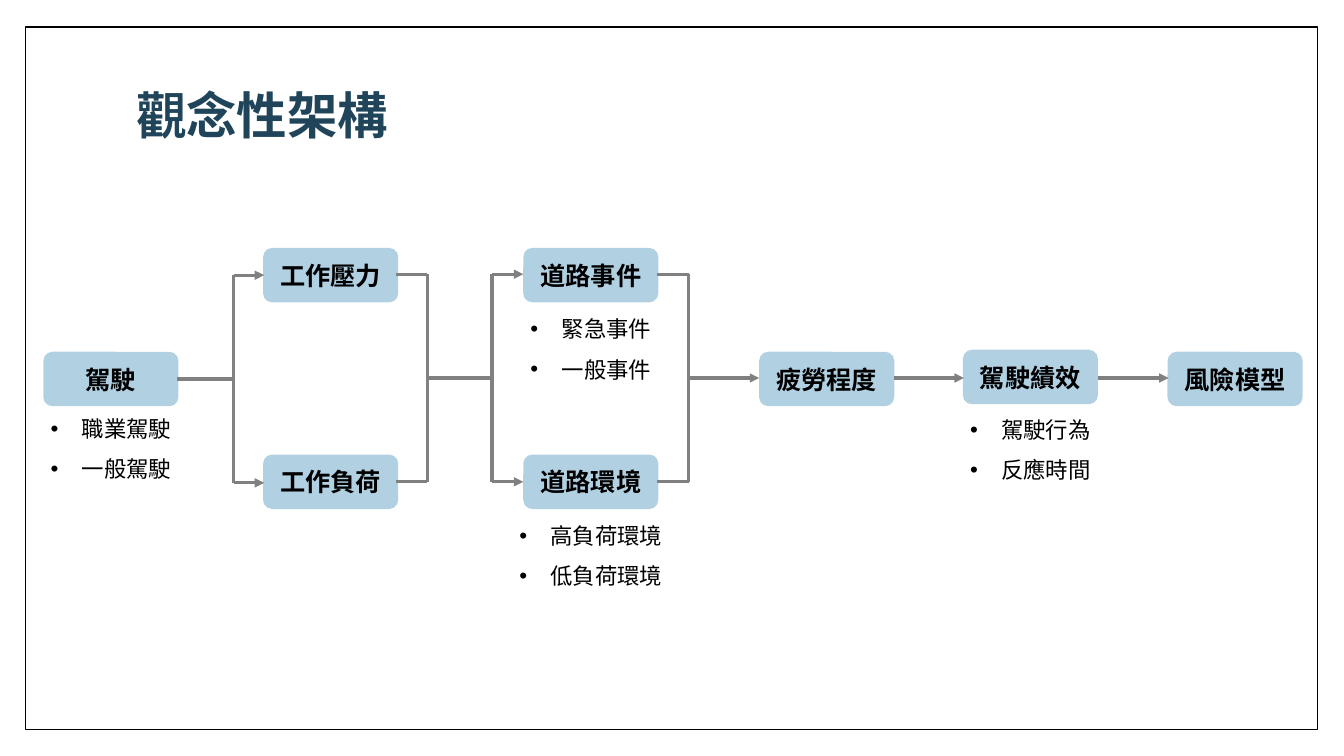
from lxml import etree
from pptx import Presentation
from pptx.dml.color import RGBColor
from pptx.enum.shapes import MSO_CONNECTOR, MSO_SHAPE
from pptx.enum.text import MSO_ANCHOR, MSO_AUTO_SIZE, PP_ALIGN
from pptx.oxml.ns import qn
from pptx.util import Inches, Pt

FONT = "Noto Sans CJK SC"
COLORS = {"title": "20455A", "text": "000000", "box": "B1D1E3",
          "line": "808080", "bracket": "818183", "page": "FFFFFF"}
BOX_W, BOX_H = 1.34, 0.54
LIST_H, INDENT = 0.71, 0.31
TOP_Y, MID_Y, LOW_Y = 2.46, 3.49, 4.51
TOP_LINE, MID_LINE, LOW_LINE = 2.72, 3.75, 4.78


def rgb(name):
    return RGBColor.from_string(COLORS[name])


def add_bullet(p):
    pPr = p._p.get_or_add_pPr()
    pPr.set("marL", str(Inches(INDENT)))
    pPr.set("indent", str(-Inches(INDENT)))
    etree.SubElement(pPr, qn("a:buFont")).set("typeface", "Arial")
    etree.SubElement(pPr, qn("a:buChar")).set("char", "•")


def write(tf, *lines, size=18, color="text", bold=False,
          align=PP_ALIGN.CENTER, spacing=None, bullet=False):
    tf.word_wrap = True
    tf.auto_size = MSO_AUTO_SIZE.NONE
    tf.vertical_anchor = MSO_ANCHOR.MIDDLE
    for i, line in enumerate(lines):
        p = tf.add_paragraph() if i else tf.paragraphs[0]
        if bullet:
            add_bullet(p)
        p.alignment = align
        if spacing:
            p.line_spacing = spacing
        r = p.add_run()
        r.text = line
        r.font.name = FONT
        r.font.size = Pt(size)
        r.font.bold = bold
        r.font.color.rgb = rgb(color)
        ea = etree.SubElement(r._r.get_or_add_rPr(), qn("a:ea"))
        ea.set("typeface", FONT)


def add_frame(s, x, y, w, h):
    sp = s.shapes.add_shape(MSO_SHAPE.RECTANGLE, Inches(x), Inches(y), Inches(w), Inches(h))
    sp.shadow.inherit = False
    sp.fill.solid()
    sp.fill.fore_color.rgb = rgb("page")
    sp.line.color.rgb = rgb("text")
    sp.line.width = Pt(1)
    # The frame lies behind the title
    s.shapes._spTree.insert(2, sp._element)


def add_title(s, text, x, y, w, h):
    sp = s.shapes.title
    sp.left, sp.top, sp.width, sp.height = map(Inches, (x, y, w, h))
    write(sp.text_frame, text, size=36, color="title", bold=True,
          align=PP_ALIGN.LEFT, spacing=0.9)


def add_factor(s, label, x, y, items=(), list_w=1.56, gap=0.01):
    """Place a factor box with an optional bullet list centred below it."""
    sp = s.shapes.add_shape(MSO_SHAPE.ROUNDED_RECTANGLE,
                            Inches(x), Inches(y), Inches(BOX_W), Inches(BOX_H))
    sp.shadow.inherit = False
    sp.fill.solid()
    sp.fill.fore_color.rgb = rgb("box")
    sp.line.fill.background()
    write(sp.text_frame, label, bold=True)
    if items:
        tb = s.shapes.add_textbox(Inches(x + (BOX_W - list_w) / 2), Inches(y + BOX_H + gap),
                                  Inches(list_w), Inches(LIST_H))
        write(tb.text_frame, *items, size=16, spacing=1.5, bullet=True)


def add_line(s, x1, y1, x2, y2, color="line", arrow=False):
    c = s.shapes.add_connector(MSO_CONNECTOR.STRAIGHT,
                               Inches(x1), Inches(y1), Inches(x2), Inches(y2))
    c.line.color.rgb = rgb(color)
    c.line.width = Pt(2.25)
    if arrow:
        etree.SubElement(c.line._get_or_add_ln(), qn("a:tailEnd")).set("type", "triangle")
    etree.SubElement(c._element.spPr, qn("a:effectLst"))


def add_bracket(s, spine_x, end_x, arrow=False, dy=0):
    """Draw a vertical spine with a branch to the upper and the lower box."""
    add_line(s, spine_x, TOP_LINE + dy, spine_x, LOW_LINE + dy, color="bracket")
    for y in (TOP_LINE + dy, LOW_LINE + dy):
        add_line(s, spine_x, y, end_x, y, arrow=arrow)


def add_flow(s):
    add_factor(s, "駕駛", 0.43, MID_Y, ("職業駕駛", "一般駕駛"), gap=0)
    add_factor(s, "工作壓力", 2.61, TOP_Y)
    add_factor(s, "工作負荷", 2.61, LOW_Y)
    add_factor(s, "道路事件", 5.19, TOP_Y, ("緊急事件", "一般事件"), gap=0.04)
    add_factor(s, "道路環境", 5.19, LOW_Y, ("高負荷環境", "低負荷環境"), list_w=1.71, gap=0.04)
    add_factor(s, "疲勞程度", 7.53, MID_Y)
    add_factor(s, "駕駛績效", 9.55, 3.47, ("駕駛行為", "反應時間"), gap=0.03)
    add_factor(s, "風險模型", 11.58, MID_Y)

    add_bracket(s, 2.32, 2.62, arrow=True, dy=0.01)
    add_bracket(s, 4.24, 3.93)
    add_bracket(s, 4.88, 5.19, arrow=True)
    add_bracket(s, 6.83, 6.52)

    add_line(s, 1.76, 3.76, 2.31, 3.76)
    add_line(s, 4.25, MID_LINE, 4.88, MID_LINE)
    for x1, x2 in ((6.84, 7.53), (8.87, 9.56), (10.89, 11.59)):
        add_line(s, x1, MID_LINE, x2, MID_LINE, arrow=True)


def main():
    prs = Presentation()
    prs.slide_width, prs.slide_height = Inches(13.33), Inches(7.5)
    s = prs.slides.add_slide(prs.slide_layouts[5])
    add_frame(s, 0.25, 0.27, 12.82, 6.97)
    add_title(s, "觀念性架構", 1.25, 0.67, 10.8, 1.01)
    add_flow(s)
    prs.save("out.pptx")


if __name__ == "__main__":
    main()
